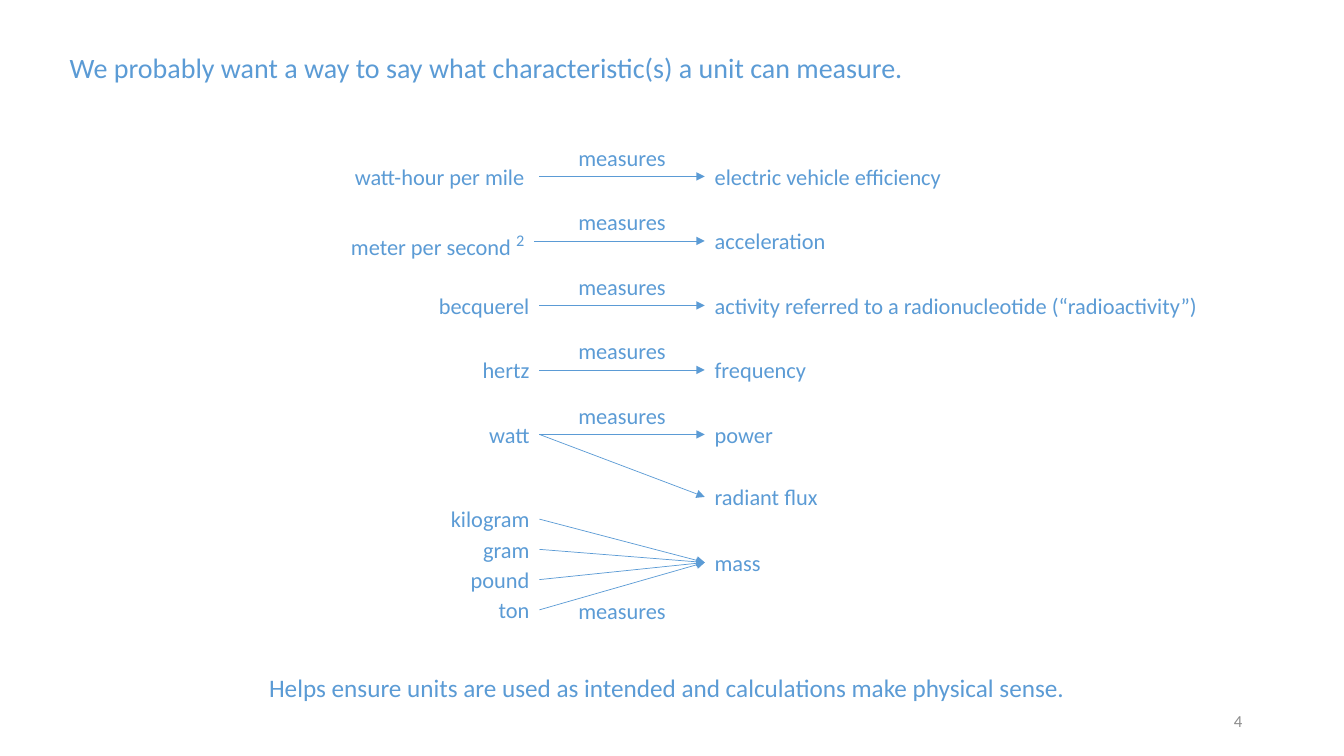
import dataclasses
import pptx
import pptx.dml.color
import pptx.enum.text
import pptx.oxml
import pptx.oxml.ns
import pptx.util
import lxml.etree

Inches = pptx.util.Inches
Pt = pptx.util.Pt
RGB = pptx.dml.color.RGBColor
Align = pptx.enum.text.PP_ALIGN
Anchor = pptx.enum.text.MSO_ANCHOR
Fit = pptx.enum.text.MSO_AUTO_SIZE
qn = pptx.oxml.ns.qn


@dataclasses.dataclass(frozen=True)
class Theme:
    """Colours, font and type sizes of the slide."""
    blue: RGB = RGB(0x5B, 0x9B, 0xD5)
    gray: RGB = RGB(0x8C, 0x8C, 0x8C)
    font: str = "Calibri"
    title: int = 20
    note: int = 18
    body: int = 16
    power: int = 20
    page: int = 12
    line: float = 0.5


THEME = Theme()
HIGH = 0.37
STEP = 0.64
LEFT, RIGHT = 5.35, 6.99
ROWS = [
    ("watt-hour per mile ", "", 1.96, LEFT, "electric vehicle efficiency", 2.48),
    ("meter per second ", "2", 1.98, 5.3, "acceleration", 1.32),
    ("becquerel", "", 1.11, LEFT, "activity referred to a radionucleotide (“radioactivity”)", 5.05),
    ("hertz", "", 0.68, LEFT, "frequency", 1.12),
    ("watt", "", 0.61, LEFT, "power", 0.79),
]
MASSES = [("kilogram", 0.99), ("gram", 0.67), ("pound", 0.79), ("ton", 0.51)]


def add_run(para, text, size, color):
    """Add a run in the theme font and return it."""
    run = para.add_run()
    run.text = text
    for key, value in {"name": THEME.font, "size": Pt(size), "bold": False}.items():
        setattr(run.font, key, value)
    run.font.color.rgb = color
    return run


def fill_text(shape, text, size, align=Align.LEFT, color=THEME.blue, **extra):
    """Format the frame of a shape and write one line in it."""
    frame = shape.text_frame
    look = {"word_wrap": False, "auto_size": Fit.SHAPE_TO_FIT_TEXT,
            "vertical_anchor": Anchor.TOP, **extra}
    for key, value in look.items():
        setattr(frame, key, value)
    para = frame.paragraphs[0]
    para.alignment = align
    add_run(para, text, size, color)
    return para


def add_text(shapes, box, text, size=THEME.body, align=Align.LEFT, **look):
    """Place a text box in the given box of inches."""
    shape = shapes.add_textbox(*map(Inches, box))
    return fill_text(shape, text, size, align, **look)


def add_arrow(shapes, start, end):
    """Draw a thin arrow between two points."""
    line = shapes.add_connector(1, *map(Inches, (*start, *end)))
    line.line.color.rgb = THEME.blue
    line.line.width = Pt(THEME.line)
    props = line._element.spPr
    tail = lxml.etree.SubElement(line.line._get_or_add_ln(), qn("a:tailEnd"))
    tail.set("type", "triangle")
    lxml.etree.SubElement(props, qn("a:effectLst"))


def add_unit(shapes, edge, mid, wide, text):
    """Place a unit name that ends at the edge."""
    box = (edge - wide, mid - HIGH / 2, wide, HIGH)
    return add_text(shapes, box, text, align=Align.RIGHT)


def add_trait(shapes, mid, wide, text):
    """Place the name of a characteristic."""
    add_text(shapes, (RIGHT, mid - HIGH / 2, wide, HIGH), text)


def add_label(shapes, top):
    """Place the word that names the arrows."""
    add_text(shapes, (5.63, top, 1.08, HIGH), "measures", align=Align.CENTER)


def add_row(slide, mid, row):
    """Build one unit, its arrow and its characteristic as a group."""
    unit, power, wide, edge, trait, span = row
    shapes = slide.shapes.add_group_shape().shapes
    para = add_unit(shapes, edge, mid, wide, unit)
    if power:
        run = add_run(para, power, THEME.power, THEME.blue)
        run.font._element.set("baseline", "30000")
    add_trait(shapes, mid, span, trait)
    add_arrow(shapes, (edge, mid), (RIGHT, mid))
    add_label(shapes, mid - 0.37)


def add_fan(slide, top, goal):
    """Build the units that share mass, with arrows that meet."""
    add_trait(slide.shapes, goal, 0.66, "mass")
    for i, (unit, wide) in enumerate(MASSES):
        mid = top + 0.3 * i
        add_unit(slide.shapes, LEFT, mid, wide, unit)
        add_arrow(slide.shapes, (LEFT, mid), (RIGHT, goal))
    add_label(slide.shapes, top + 0.73)


def add_title(slide, box):
    """Place and format the title."""
    title = slide.shapes.title
    for key, value in zip(("left", "top", "width", "height"), box):
        setattr(title, key, Inches(value))
    fill_text(title, "We probably want a way to say what characteristic(s) a unit can measure.",
              THEME.title)


def add_foot(slide, note, page):
    """Place the closing remark and the page number."""
    add_text(slide.shapes, note,
             "Helps ensure units are used as intended and calculations make physical sense.",
             THEME.note)
    add_text(slide.shapes, page, "4", THEME.page, Align.RIGHT, color=THEME.gray,
             word_wrap=True, auto_size=Fit.NONE, vertical_anchor=Anchor.MIDDLE)


def main():
    """Build the slide and save it."""
    deck = pptx.Presentation()
    deck.slide_width, deck.slide_height = Inches(13.33), Inches(7.5)
    slide = deck.slides.add_slide(deck.slide_layouts[5])
    add_title(slide, (0.59, 0.45, 8.55, 0.44))
    for i, row in enumerate(ROWS):
        add_row(slide, 1.75 + STEP * i, row)
    watt, flux = 4.31, 4.93
    add_trait(slide.shapes, flux, 1.23, "radiant flux")
    add_arrow(slide.shapes, (LEFT, watt), (RIGHT, flux))
    add_fan(slide, 5.15, 5.58)
    add_foot(slide, (2.57, 6.62, 8.19, 0.4), (9.42, 6.95, 3, 0.4))
    deck.save("out.pptx")


if __name__ == "__main__":
    main()
